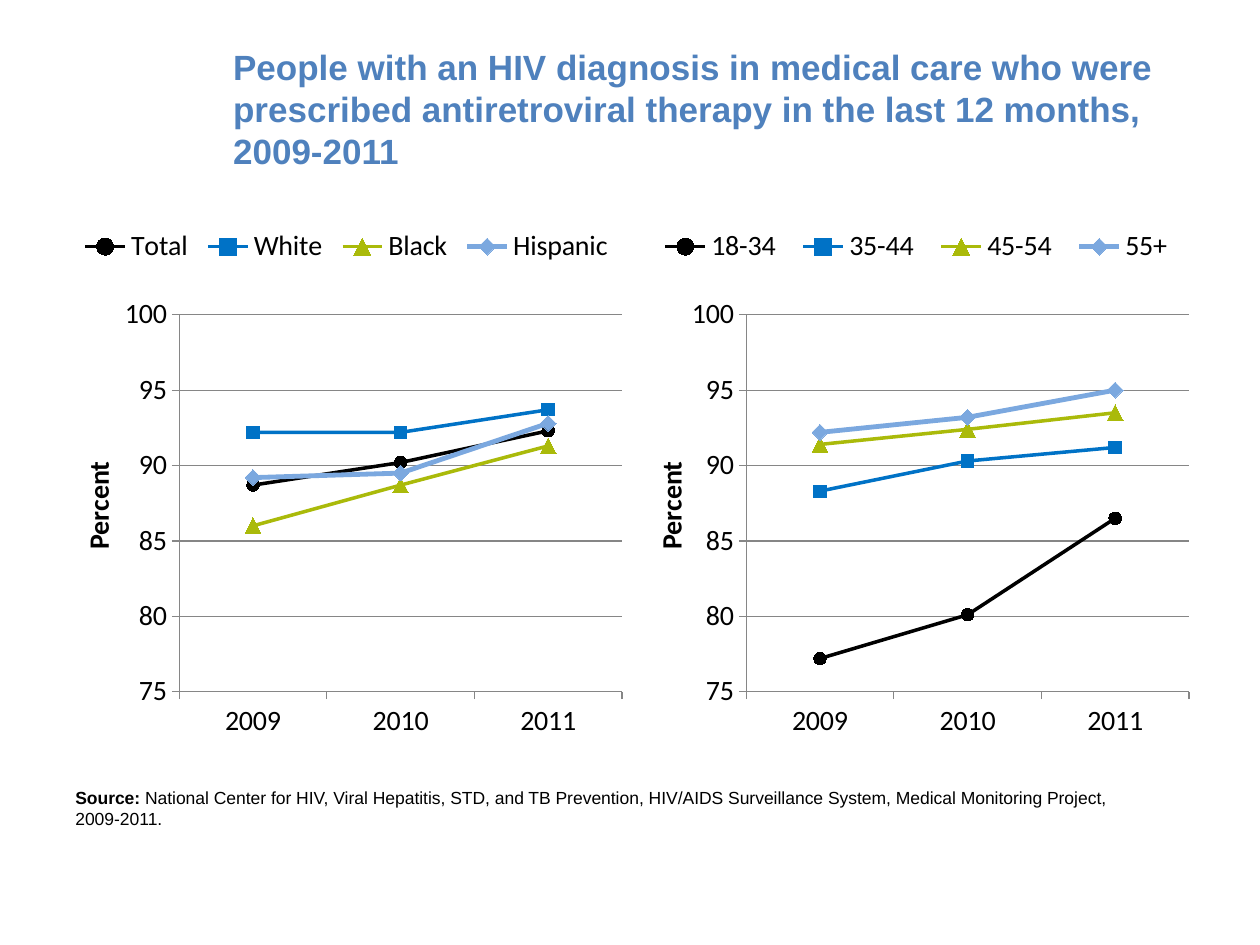
"""Build a slide with two line charts on antiretroviral therapy, 2009-2011."""
from lxml.etree import SubElement
from pptx import Presentation
from pptx.chart.data import CategoryChartData
from pptx.dml.color import RGBColor
from pptx.enum.chart import XL_CHART_TYPE, XL_LEGEND_POSITION, XL_MARKER_STYLE, XL_TICK_MARK
from pptx.enum.text import MSO_ANCHOR
from pptx.oxml.ns import qn
from pptx.util import Cm, Pt

BLACK = RGBColor(0x00, 0x00, 0x00)
BLUE = RGBColor(0x00, 0x72, 0xC6)
GREEN = RGBColor(0xAA, 0xBA, 0x0A)
LIGHT_BLUE = RGBColor(0x7B, 0xA8, 0xDF)
HEADING_BLUE = RGBColor(0x4F, 0x81, 0xBD)
GRAY = RGBColor(0x86, 0x86, 0x86)

HEADING = ("People with an HIV diagnosis in medical care who were prescribed "
           "antiretroviral therapy in the last 12 months, 2009-2011")
SOURCE_LABEL = "Source:"
SOURCE = (" National Center for HIV, Viral Hepatitis, STD, and TB Prevention, "
          "HIV/AIDS Surveillance System, Medical Monitoring Project, 2009-2011.")
YEARS = ["2009", "2010", "2011"]
GROUPS = [
    {"Total": (88.7, 90.2, 92.3), "White": (92.2, 92.2, 93.7),
     "Black": (86, 88.7, 91.3), "Hispanic": (89.2, 89.5, 92.8)},
    {"18-34": (77.2, 80.1, 86.5), "35-44": (88.3, 90.3, 91.2),
     "45-54": (91.4, 92.4, 93.5), "55+": (92.2, 93.2, 95)},
]
SERIES_STYLES = [
    (BLACK, 2, XL_MARKER_STYLE.CIRCLE, 7),
    (BLUE, 2, XL_MARKER_STYLE.SQUARE, 7),
    (GREEN, 2, XL_MARKER_STYLE.TRIANGLE, 9),
    (LIGHT_BLUE, 2.75, XL_MARKER_STYLE.DIAMOND, 9),
]
HEADING_FONT = {"name": "Arial", "size": Pt(20), "bold": True}
SOURCE_FONT = {"name": "Arial", "size": Pt(10)}
CHART_FONT = {"name": "Arial", "size": Pt(10)}
LABEL_FONT = {"name": "Calibri", "size": Pt(16), "bold": False}
AXIS_TITLE_FONT = {**LABEL_FONT, "bold": True}
PERCENT_SCALE = {"minimum_scale": 75, "maximum_scale": 100, "major_unit": 5,
                 "has_major_gridlines": True, "has_title": True}
CHART_LEFT, CHART_TOP, CHART_SIZE = 1.27, 4.06, 11.43
PLOT_LAYOUT = {"layoutTarget": "inner", "xMode": "edge", "yMode": "edge",
               "x": 0.205, "y": 0.2, "w": 0.781, "h": 0.665}
LEGEND_LAYOUTS = [
    {"xMode": "edge", "yMode": "edge", "x": x, "y": 0.03, "w": w, "h": 0.1}
    for x, w in ((0.02, 0.96), (0.03, 0.95))
]
TITLE_LAYOUTS = [{"xMode": "edge", "yMode": "edge", "x": x, "y": 0.45} for x in (0.02, 0.03)]


def apply(target, values):
    for name, value in values.items():
        setattr(target, name, value)


def style_font(font, values, color=BLACK):
    apply(font, values)
    font.color.rgb = color


def style_line(line, color, width):
    line.color.rgb = color
    line.width = Pt(width)


def place(element, values, position):
    for old in element.findall(qn("c:layout")):
        element.remove(old)
    layout = SubElement(element, qn("c:layout"))
    manual = SubElement(layout, qn("c:manualLayout"))
    for name, value in values.items():
        SubElement(manual, qn(f"c:{name}")).set("val", str(value))
    element.insert(position, layout)


def add_text(slide, box, runs, anchor=MSO_ANCHOR.TOP):
    frame = slide.shapes.add_textbox(*map(Cm, box)).text_frame
    apply(frame, {"word_wrap": True, "vertical_anchor": anchor})
    for text, font, color in runs:
        run = frame.paragraphs[0].add_run()
        run.text = text
        style_font(run.font, font, color)


def style_axes(chart, title_layout):
    percent, years = chart.value_axis, chart.category_axis
    for axis in (percent, years):
        apply(axis, {"major_tick_mark": XL_TICK_MARK.OUTSIDE,
                     "minor_tick_mark": XL_TICK_MARK.NONE})
        style_font(axis.tick_labels.font, LABEL_FONT)
        style_line(axis.format.line, GRAY, 0.75)
    apply(percent, PERCENT_SCALE)
    apply(percent.tick_labels, {"number_format": "0", "number_format_is_linked": False})
    style_line(percent.major_gridlines.format.line, GRAY, 0.75)
    title = percent.axis_title
    frame = title.text_frame
    frame.text = "Percent"
    style_font(frame.paragraphs[0].runs[0].font, AXIS_TITLE_FONT)
    apply_rotation = frame._txBody.find(qn("a:bodyPr")).set
    apply_rotation("rot", "-5400000")
    apply_rotation("vert", "horz")
    place(title._element, title_layout, 1)


def add_group_chart(slide, index, group):
    data = CategoryChartData(number_format="0.0")
    data.categories = YEARS
    for name, percents in group.items():
        data.add_series(name, percents)
    left = CHART_LEFT + index * CHART_SIZE
    chart = slide.shapes.add_chart(
        XL_CHART_TYPE.LINE_MARKERS, Cm(left), Cm(CHART_TOP),
        Cm(CHART_SIZE), Cm(CHART_SIZE), data).chart
    apply(chart, {"has_title": False, "has_legend": True})
    style_font(chart.font, CHART_FONT)
    apply(chart.legend, {"position": XL_LEGEND_POSITION.TOP, "include_in_layout": False})
    style_font(chart.legend.font, LABEL_FONT)
    place(chart.legend._element, LEGEND_LAYOUTS[index], 1)
    place(chart._chartSpace.chart.plotArea, PLOT_LAYOUT, 0)
    style_axes(chart, TITLE_LAYOUTS[index])
    chart.plots[0].vary_by_categories = False
    for series, (color, width, symbol, size) in zip(chart.plots[0].series, SERIES_STYLES):
        series.smooth = False
        style_line(series.format.line, color, width)
        marker = series.marker
        apply(marker, {"style": symbol, "size": size})
        marker.format.fill.solid()
        marker.format.fill.fore_color.rgb = color
        marker.format.line.color.rgb = color


def main():
    deck = Presentation()
    apply(deck, {"slide_width": Cm(25.4), "slide_height": Cm(19.05)})
    slide = deck.slides.add_slide(deck.slide_layouts[6])
    add_text(slide, (4.45, 0.76, 19.69, 2.84),
             [(HEADING, HEADING_FONT, HEADING_BLUE)], MSO_ANCHOR.MIDDLE)
    for index, group in enumerate(GROUPS):
        add_group_chart(slide, index, group)
    add_text(slide, (1.27, 15.75, 21.79, 1.12),
             [(SOURCE_LABEL, {**SOURCE_FONT, "bold": True}, BLACK),
              (SOURCE, {**SOURCE_FONT, "bold": False}, BLACK)])
    deck.save("out.pptx")


if __name__ == "__main__":
    main()
